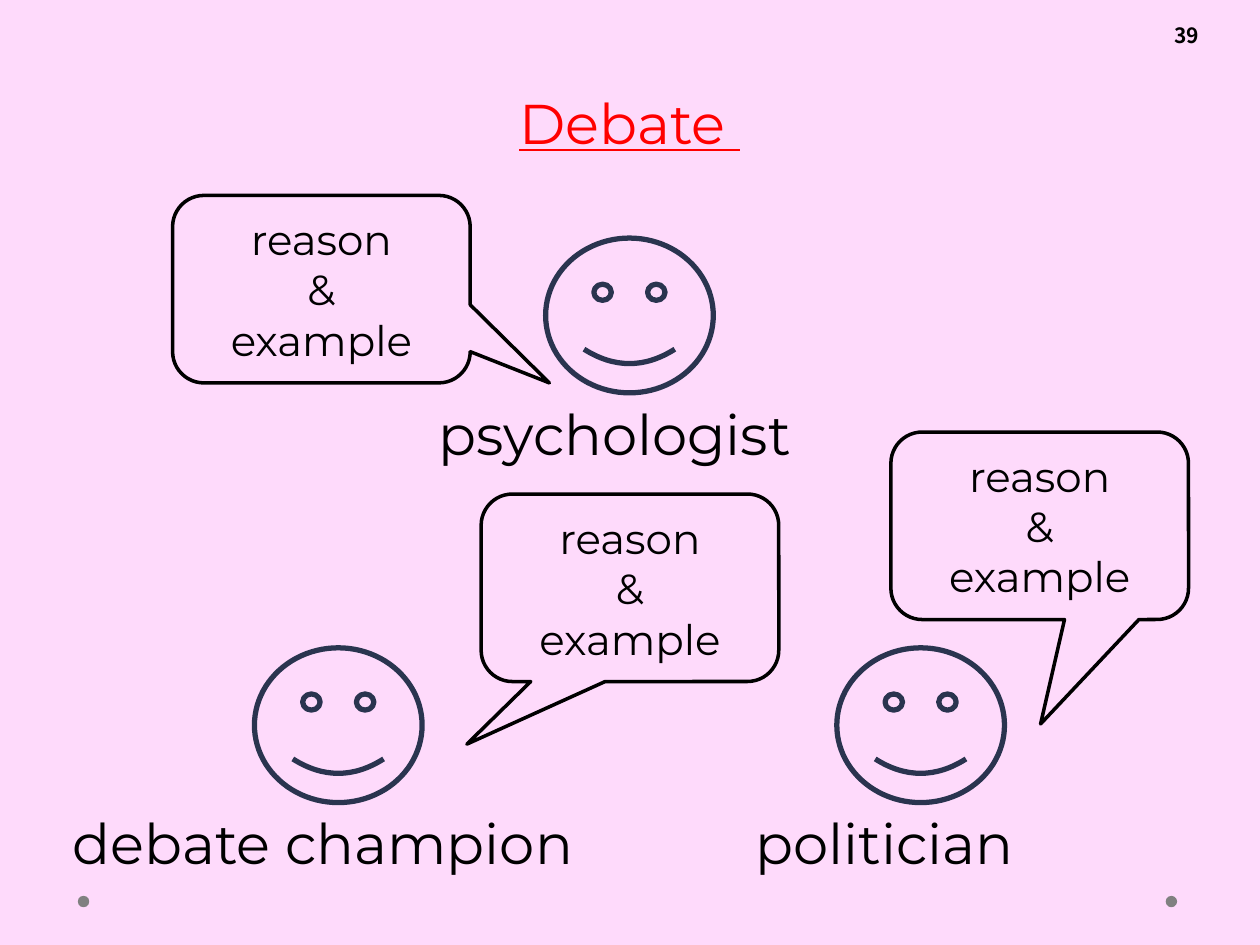
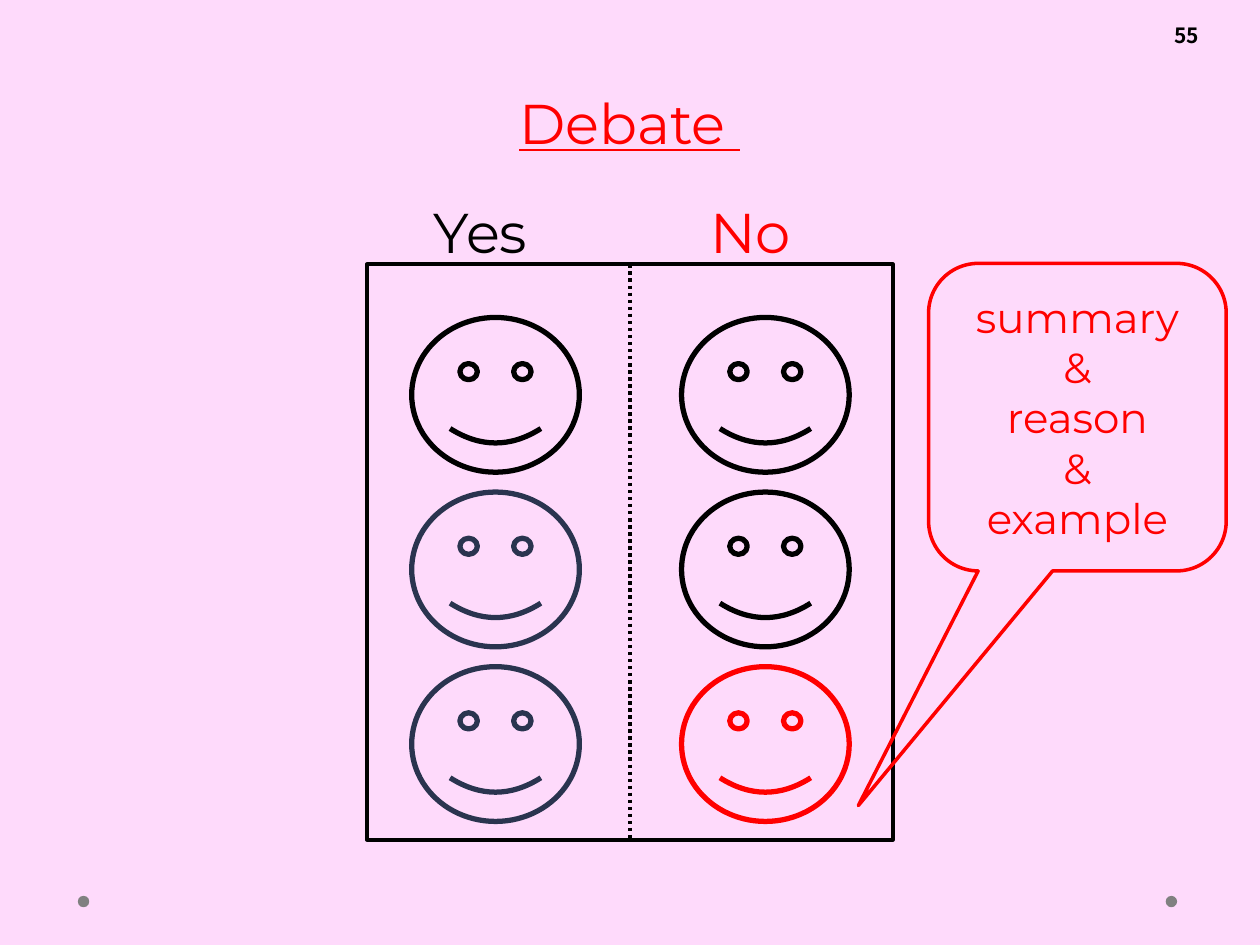
from lxml.etree import SubElement
from pptx import Presentation
from pptx.dml.color import RGBColor
from pptx.enum.dml import MSO_LINE
from pptx.enum.shapes import MSO_CONNECTOR, MSO_SHAPE
from pptx.enum.text import MSO_ANCHOR, MSO_AUTO_SIZE, PP_ALIGN
from pptx.oxml.ns import qn
from pptx.util import Cm, Pt

COLOURS = {
    "pink": "FEDAFB",
    "grey": "808080",
    "black": "000000",
    "navy": "2A344F",
    "red": "FF0000",
}
FONT = "Montserrat"
NUMBER_FONT = "Noto Sans CJK JP"

TITLE = "Debate "
ARGUMENT = ["reason", "&", "example"]
CLOSING = ["summary", "&", "reason", "&", "example"]

# role, face left, face top, label left, label width
SPEAKERS = [
    ("debate champion", 5.13, 13.06, 0.91, 11.81),
    ("psychologist", 11, 4.8, 7.95, 9.5),
    ("politician", 16.87, 13.06, 13.39, 9.5),
]
# bubble left, bubble top, pointer
ARGUMENTS = [
    (3.48, 3.94, (0.766, 0.5)),
    (17.96, 8.71, (0.003, 1.057)),
    (9.7, 9.96, (-0.548, 0.834)),
]
# side, label colour, face colours from top to bottom
SIDES = [
    ("Yes", "black", ["black", "navy", "navy"]),
    ("No", "red", ["black", "black", "red"]),
]

SLIDE_W, SLIDE_H = 25.4, 19.05
FACE_W, FACE_H = 3.38, 3.12
BUBBLE_W = 6
LABEL_H = 1.63
TRAILING = 0.6
DOT = 0.23
DOT_LEFTS = [1.57, 23.5]
FRAME = (7.4, 5.33, 10.6, 11.6)
FIRST_FACE = (8.3, 6.4)
SIDE_PITCH, ROW_PITCH = 5.44, 3.52
SIDE_LABEL_TOP, SIDE_LABEL_W = 3.86, 4


def rgb(name):
    return RGBColor.from_string(COLOURS[name])


def style_text(frame, size, colour, font=FONT, align=PP_ALIGN.CENTER, bold=None, underline=None):
    for paragraph in frame.paragraphs:
        paragraph.alignment = align
        for run in paragraph.runs:
            run.font.name = font
            run.font.size = Pt(size)
            run.font.bold = bold
            run.font.underline = underline
            run.font.color.rgb = rgb(colour)


def add_text(slide, text, left, top, width, height, size, colour, **style):
    box = slide.shapes.add_textbox(Cm(left), Cm(top), Cm(width), Cm(height))
    frame = box.text_frame
    frame.word_wrap = True
    frame.auto_size = MSO_AUTO_SIZE.SHAPE_TO_FIT_TEXT
    frame.text = text
    style_text(frame, size, colour, **style)
    return frame


def add_label(slide, text, left, top, width, colour="black"):
    frame = add_text(slide, text, left, top, width, LABEL_H, 32, colour)
    frame.margin_right += Cm(TRAILING)


def add_outline(slide, kind, left, top, width, height, colour, weight):
    shape = slide.shapes.add_shape(kind, Cm(left), Cm(top), Cm(width), Cm(height))
    shape.shadow.inherit = False
    shape.fill.background()
    shape.line.color.rgb = rgb(colour)
    shape.line.width = Pt(weight)
    return shape


def add_face(slide, left, top, colour="navy"):
    add_outline(slide, MSO_SHAPE.SMILEY_FACE, left, top, FACE_W, FACE_H, colour, 3)


def add_bubble(slide, lines, left, top, height, pointer, colour="black"):
    bubble = add_outline(slide, MSO_SHAPE.ROUNDED_RECTANGULAR_CALLOUT,
                         left, top, BUBBLE_W, height, colour, 2)
    for index, value in enumerate((*pointer, 0.167)):
        bubble.adjustments[index] = value
    frame = bubble.text_frame
    frame.vertical_anchor = MSO_ANCHOR.MIDDLE
    frame.text = "\n".join(lines)
    style_text(frame, 24, colour)


def add_divider(slide, frame):
    middle = frame.left + frame.width // 2
    divider = slide.shapes.add_connector(MSO_CONNECTOR.STRAIGHT, middle, frame.top,
                                         middle, frame.top + frame.height)
    divider.begin_connect(frame, 0)
    divider.end_connect(frame, 2)
    divider.line.color.rgb = rgb("black")
    divider.line.width = Pt(2)
    divider.line.dash_style = MSO_LINE.ROUND_DOT
    SubElement(divider._element.spPr, qn("a:effectLst"))


def start_slide(prs, number):
    slide = prs.slides.add_slide(prs.slide_layouts[6])
    for left in DOT_LEFTS:
        dot = slide.shapes.add_shape(MSO_SHAPE.OVAL, Cm(left), Cm(18.06), Cm(DOT), Cm(DOT))
        dot.shadow.inherit = False
        dot.fill.solid()
        dot.fill.fore_color.rgb = rgb("grey")
        dot.line.fill.background()
    add_text(slide, str(number), 23.42, 0.33, 1.4, 0.76, 12, "black",
             font=NUMBER_FONT, align=PP_ALIGN.LEFT, bold=True)
    add_text(slide, TITLE, 1.4, 1.66, 22.6, LABEL_H, 32, "red", underline=True)
    return slide


def build_speakers(prs):
    slide = start_slide(prs, 39)
    for role, left, top, label_left, label_width in SPEAKERS:
        add_face(slide, left, top)
        add_label(slide, role, label_left, top + FACE_H, label_width)
    for left, top, pointer in ARGUMENTS:
        add_bubble(slide, ARGUMENT, left, top, 3.78, pointer)


def build_sides(prs):
    slide = start_slide(prs, 55)
    frame = add_outline(slide, MSO_SHAPE.RECTANGLE, *FRAME, "black", 2.25)
    add_divider(slide, frame)
    for column, (side, label_colour, face_colours) in enumerate(SIDES):
        left = FIRST_FACE[0] + column * SIDE_PITCH
        for row, colour in enumerate(face_colours):
            add_face(slide, left, FIRST_FACE[1] + row * ROW_PITCH, colour)
        label_left = left + (FACE_W - SIDE_LABEL_W) / 2
        add_label(slide, side, label_left, SIDE_LABEL_TOP, SIDE_LABEL_W, label_colour)
    add_bubble(slide, CLOSING, 18.72, 5.31, 6.2, (-0.736, 1.263), "red")


def main():
    prs = Presentation()
    prs.slide_width, prs.slide_height = Cm(SLIDE_W), Cm(SLIDE_H)
    backdrop = prs.slide_master.background.fill
    backdrop.solid()
    backdrop.fore_color.rgb = rgb("pink")
    build_speakers(prs)
    build_sides(prs)
    prs.save("out.pptx")


if __name__ == "__main__":
    main()
